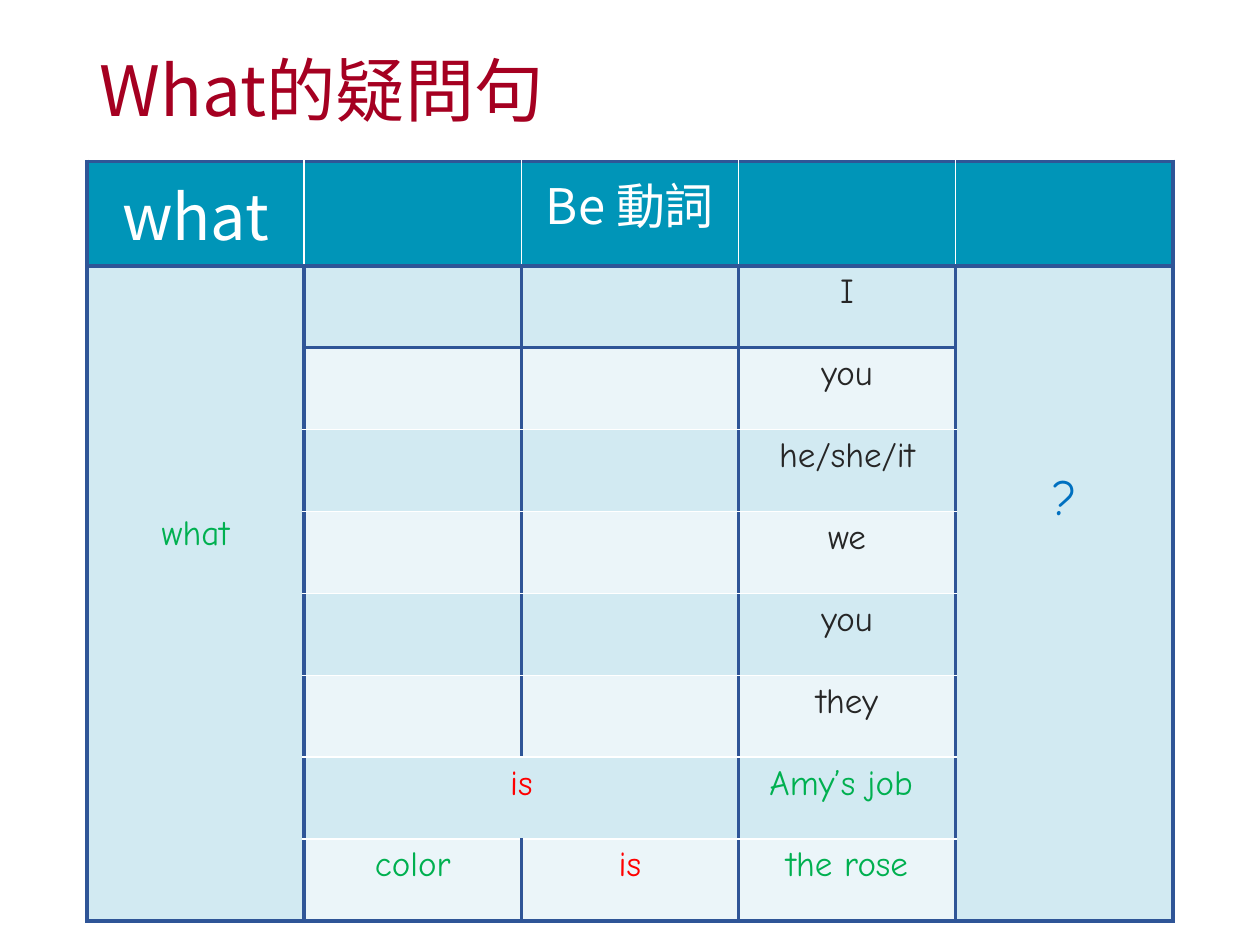
from lxml.etree import SubElement
from pptx import Presentation
from pptx.dml.color import RGBColor
from pptx.enum.text import MSO_ANCHOR, PP_ALIGN
from pptx.oxml import parse_xml
from pptx.oxml.ns import nsdecls, qn
from pptx.util import Inches, Pt

LEFT, TOP, COL = 0.69, 1.28, 1.724
COLS, ROWS = 5, 9
HEAD, ROW = 0.83, 0.65
SANS, COMIC = "Noto Sans CJK JP", "Comic Neue"
WHITE, BLUE, GREEN, RED, DARK = "FFFFFF", "2F5597", "00B050", "FF0000", "262626"
BANDS = ("EBF5F9", "D2EAF2")
SUBJECTS = ("I", "you", "he/she/it", "we", "you", "they")


def paint(color):
    """Turn a hex string into a colour."""
    return RGBColor.from_string(color)


def write(frame, text, size, color, font, align=PP_ALIGN.CENTER):
    """Put one formatted line into a text frame."""
    frame.text = text
    line = frame.paragraphs[0]
    line.alignment = align
    for run in line.runs:
        run.font.size = Pt(size)
        run.font.name = font
        run.font.color.rgb = paint(color)
        SubElement(run.font._element, qn("a:ea"), typeface=font)


def edge(cell, colors):
    """Draw left, right, top and bottom borders, thick when blue."""
    props = cell._tc.get_or_add_tcPr()
    for index, (side, color) in enumerate(zip("LRTB", colors)):
        width = Pt(2.25 if color == BLUE else 1)
        props.insert(index, parse_xml(
            f'<a:ln{side} {nsdecls("a")} w="{width}"><a:solidFill>'
            f'<a:srgbClr val="{color}"/></a:solidFill></a:ln{side}>'))


def sides(row, col):
    """Choose the four border colours of a cell."""
    if row == 0:
        return (BLUE if col == 0 else WHITE,
                BLUE if col == COLS - 1 else WHITE, BLUE, BLUE)
    if col in (0, COLS - 1):
        return (BLUE,) * 4
    return (BLUE, BLUE, BLUE if row in (1, 2) else WHITE,
            BLUE if row in (1, ROWS - 1) else WHITE)


def make_grid(slide):
    """Add the empty table with its fills, borders and merged cells."""
    grid = slide.shapes.add_table(
        ROWS, COLS, Inches(LEFT), Inches(TOP), Inches(COL * COLS),
        Inches(HEAD + ROW * (ROWS - 1))).table
    for row in range(ROWS):
        grid.rows[row].height = Inches(ROW if row else HEAD)
        for col in range(COLS):
            cell = grid.cell(row, col)
            band = 1 if col in (0, COLS - 1) else row % 2
            cell.fill.solid()
            cell.fill.fore_color.rgb = paint(BANDS[band] if row else "0095B8")
            edge(cell, sides(row, col))
    for col in (0, COLS - 1):
        grid.cell(1, col).merge(grid.cell(ROWS - 1, col))
    grid.cell(7, 1).merge(grid.cell(7, 2))
    return grid


def fill_grid(grid):
    """Write the heads, the subjects and the example words."""
    write(grid.cell(0, 0).text_frame, "what", 36, WHITE, SANS)
    write(grid.cell(0, 2).text_frame, "Be 動詞", 28, WHITE, SANS)
    for row, word in enumerate(SUBJECTS, 1):
        write(grid.cell(row, 3).text_frame, word, 20, DARK, COMIC)
    words = ((7, 1, "is", RED), (7, 3, "Amy’s job ", GREEN),
             (8, 1, "color", GREEN), (8, 2, " is ", RED),
             (8, 3, "the rose", GREEN))
    for row, col, word, color in words:
        write(grid.cell(row, col).text_frame, word, 20, color, COMIC)
    for col, word, size, color, drop in ((0, "what", 20, GREEN, 1.97),
                                         (4, "?", 28, "0070C0", 1.63)):
        cell = grid.cell(1, col)
        cell.margin_top = Inches(drop)
        write(cell.text_frame, word, size, color, COMIC)


def add_title(slide):
    """Place and format the title."""
    title = slide.shapes.title
    title.left, title.top = Inches(LEFT), Inches(0.4)
    title.width, title.height = Inches(COL * COLS), Inches(0.7)
    frame = title.text_frame
    frame.vertical_anchor = MSO_ANCHOR.MIDDLE
    write(frame, "What的疑問句", 39.6, "A50021", SANS, PP_ALIGN.LEFT)
    frame.paragraphs[0].line_spacing = 0.9


def main():
    """Build the slide and save it."""
    deck = Presentation()
    deck.slide_width, deck.slide_height = Inches(10), Inches(7.5)
    slide = deck.slides.add_slide(deck.slide_layouts[5])
    add_title(slide)
    fill_grid(make_grid(slide))
    deck.save("out.pptx")


if __name__ == "__main__":
    main()
